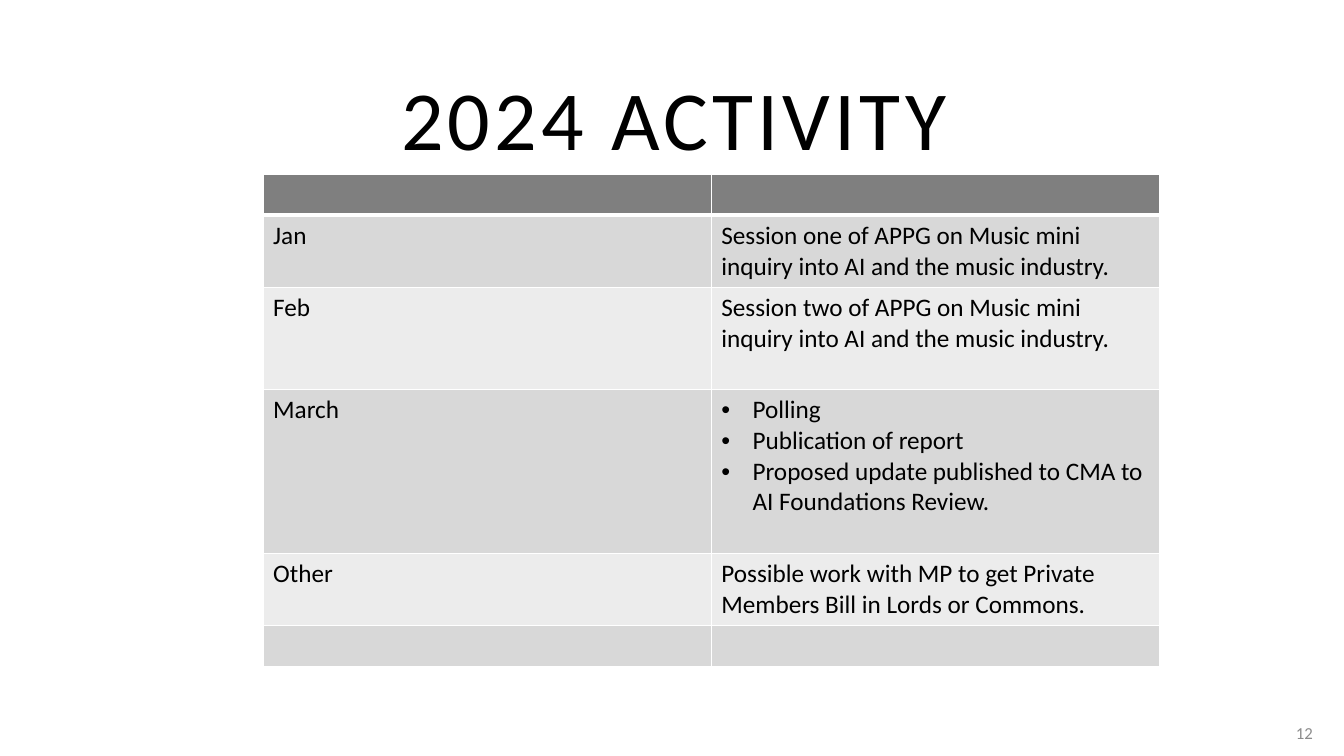
from lxml.etree import SubElement
from pptx import Presentation
from pptx.dml.color import RGBColor
from pptx.enum.text import MSO_ANCHOR, MSO_AUTO_SIZE, PP_ALIGN
from pptx.oxml.ns import qn
from pptx.util import Inches, Pt

COLORS = {"ink": "000000", "page": "8C8C8C", "line": "FFFFFF",
          "head": "7F7F7F", "dark": "D8D8D8", "light": "ECECEC"}


class Deck:
    font = "Calibri"

    def __init__(self, wide, high):
        self.file = Presentation()
        self.file.slide_width = Inches(wide)
        self.file.slide_height = Inches(high)
        self.slide = self.file.slides.add_slide(self.file.slide_layouts[6])

    def run(self, para, text, size, color="ink", space=0):
        run = para.add_run()
        run.text = text
        run.font.name = self.font
        run.font.size = Pt(size)
        run.font.color.rgb = RGBColor.from_string(COLORS[color])
        if space:
            run.font._element.set("spc", str(space * 100))

    def text(self, box, text, size, anchor, align=PP_ALIGN.LEFT, **style):
        frame = self.slide.shapes.add_textbox(*map(Inches, box)).text_frame
        frame.word_wrap = True
        frame.auto_size = MSO_AUTO_SIZE.NONE
        frame.vertical_anchor = anchor
        para = frame.paragraphs[0]
        para.alignment = align
        self.run(para, text, size, **style)

    def bullet(self, para):
        props = para._p.get_or_add_pPr()
        props.set("marL", str(Inches(0.31)))
        props.set("indent", str(-Inches(0.31)))
        SubElement(props, qn("a:buFont"), typeface="Arial")
        SubElement(props, qn("a:buChar"), char="•")

    def cell(self, cell, lines, fill, edges):
        props = cell._tc.get_or_add_tcPr()
        for side, width in edges.items():
            line = SubElement(props, qn(f"a:ln{side}"), w=str(Pt(width)))
            solid = SubElement(line, qn("a:solidFill"))
            SubElement(solid, qn("a:srgbClr"), val=COLORS["line"])
        cell.fill.solid()
        cell.fill.fore_color.rgb = RGBColor.from_string(COLORS[fill])
        frame = cell.text_frame
        for num, text in enumerate(lines):
            para = frame.add_paragraph() if num else frame.paragraphs[0]
            if len(lines) > 1:
                self.bullet(para)
            self.run(para, text, 18)

    def table(self, box, rows, highs):
        shape = self.slide.shapes.add_table(len(rows), 2, *map(Inches, box))
        grid = shape.table
        for col in grid.columns:
            col.width = Inches(box[2] / 2)
        for r, (row, high) in enumerate(zip(rows, highs)):
            grid.rows[r].height = Inches(high)
            fill = ("dark" if r % 2 else "light") if r else "head"
            edges = {"L": 1, "R": 1, "T": 3 if r == 1 else 1,
                     "B": 1 if r else 3}
            for c, lines in enumerate(row):
                self.cell(grid.cell(r, c), lines, fill, edges)


def main():
    deck = Deck(13.33, 7.5)

    # Page number
    deck.text((12.63, 7.07, 0.49, 0.4), "12", 12, MSO_ANCHOR.MIDDLE,
              PP_ALIGN.RIGHT, color="page")

    # Activity by month
    rows = [
        ([], []),
        (["Jan"], ["Session one of APPG on Music mini inquiry into AI "
                   "and the music industry."]),
        (["Feb"], ["Session two of APPG on Music mini inquiry into AI "
                   "and the music industry."]),
        (["March"], ["Polling", "Publication of report",
                     "Proposed update published to CMA to "
                     "AI Foundations Review."]),
        (["Other"], ["Possible work with MP to get Private Members Bill "
                     "in Lords or Commons."]),
        ([], []),
    ]
    highs = [0.4, 0.72, 1.01, 1.63, 0.71, 0.4]
    deck.table((2.61, 1.73, 8.89, sum(highs)), rows, highs)

    # Title
    deck.text((3.88, 0.7, 5.74, 1.01), "2024 ACTIVITY", 60,
              MSO_ANCHOR.BOTTOM, space=3)

    deck.file.save("out.pptx")


if __name__ == "__main__":
    main()
